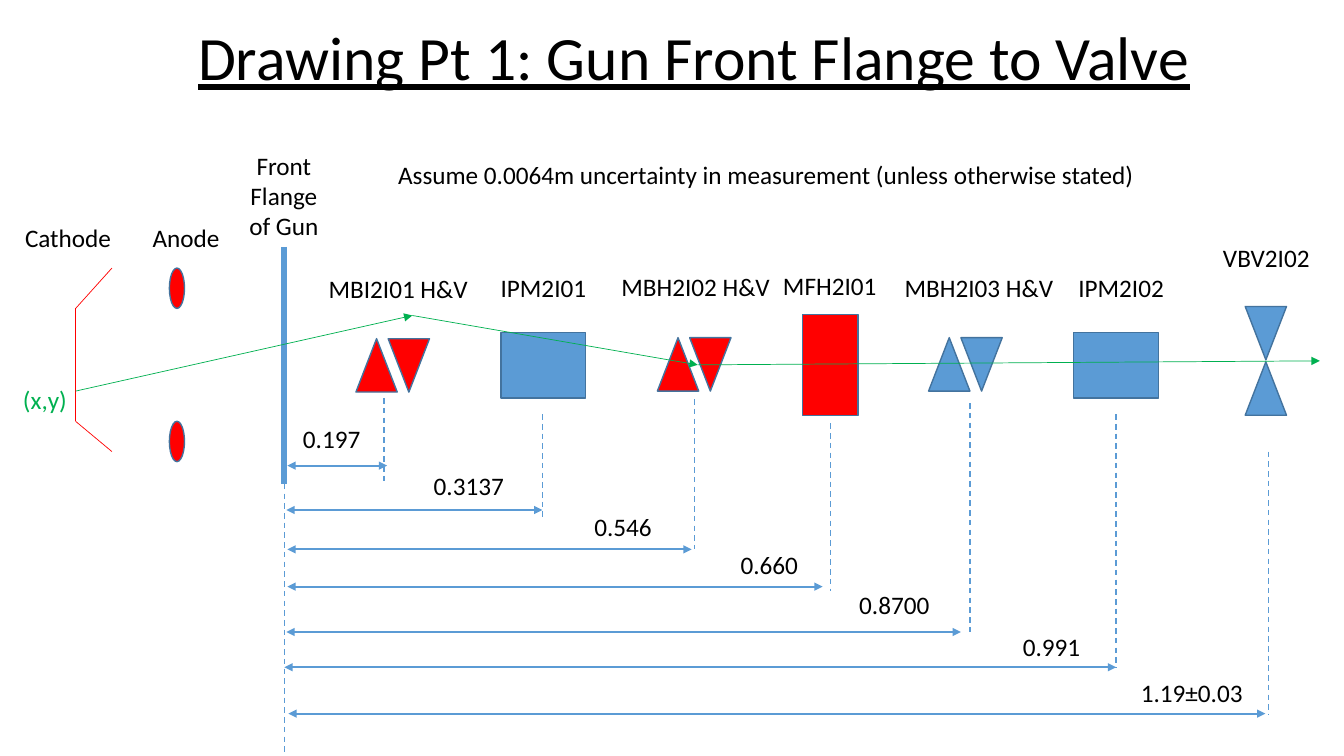
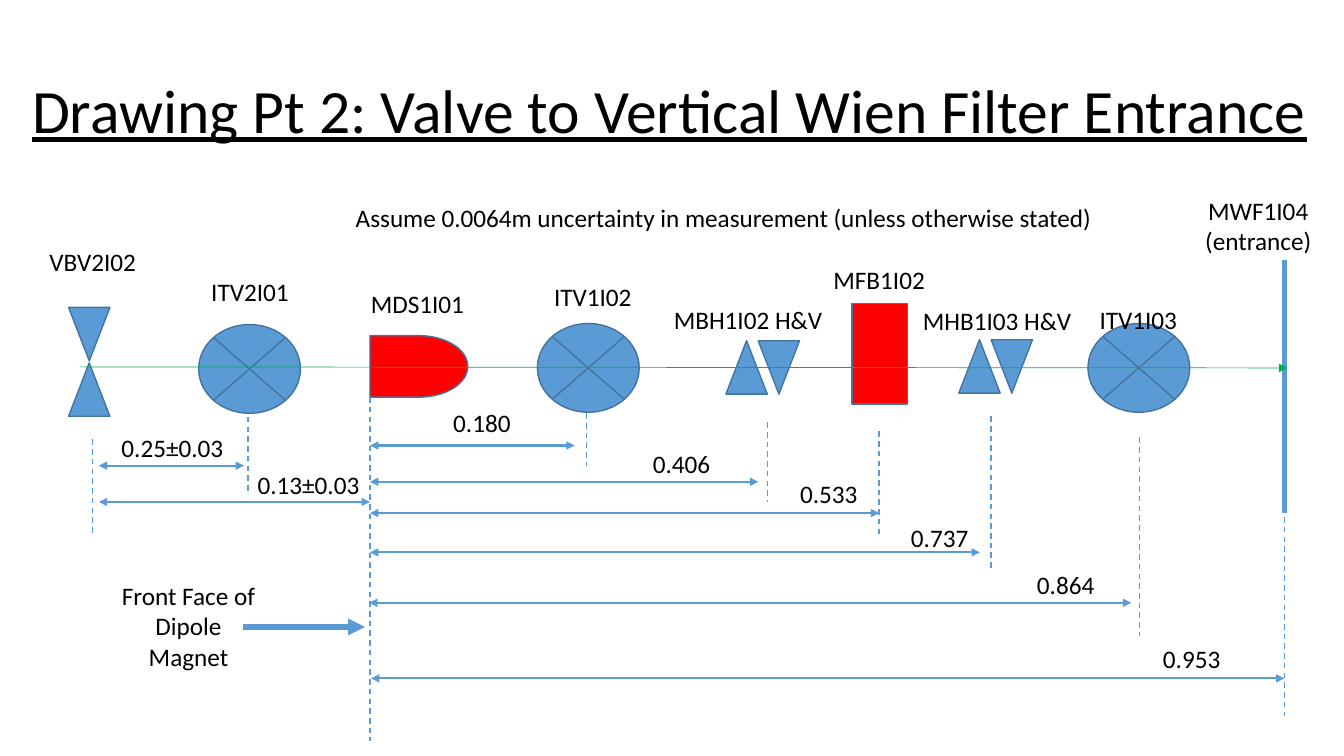
from dataclasses import dataclass, field
from itertools import pairwise

from pptx import Presentation
from pptx import util as u
from pptx.dml import color
from pptx.enum import dml, shapes, text
from pptx.oxml import xmlchemy

PX = 9144  # EMU in one px, 100 px to the inch
SHAPE = shapes.MSO_SHAPE
ALIGN = text.PP_ALIGN


def rgb(code):
    return color.RGBColor.from_string(code)


@dataclass(frozen=True)
class Theme:
    ink: str = "000000"
    cool: str = "5B9BD5"
    hot: str = "FF0000"
    outline: str = "43739E"
    beam: str = "00B050"
    title: dict = field(default_factory=lambda: dict(
        name="Calibri", size=u.Pt(44), underline=True))
    body: dict = field(default_factory=lambda: dict(
        name="Calibri", size=u.Pt(18), underline=False))
    hairline: float = 0.5
    thin: float = 1
    measure: float = 1.5
    thick: float = 4


THEME = Theme()


@dataclass(frozen=True)
class Box:
    left: int
    top: int
    width: int = 0
    height: int = 0

    def inner(self, left, top, width=0, height=0):
        return Box(self.left + left, self.top + top, width, height)

    def emu(self):
        return [side * PX for side in (self.left, self.top, self.width, self.height)]


# Each beamline element is made of (preset, left, top, width, height, rotation)
ELEMENTS = {
    "steerer": [(SHAPE.ISOSCELES_TRIANGLE, 0, 0, 41, 53, 0),
                (SHAPE.ISOSCELES_TRIANGLE, 32, 0, 41, 53, 180)],
    "valve": [(SHAPE.ISOSCELES_TRIANGLE, 0, 0, 41, 53, 180),
              (SHAPE.ISOSCELES_TRIANGLE, 0, 55, 41, 53, 0)],
    "monitor": [(SHAPE.RECTANGLE, 0, 0, 84, 65, 0)],
    "lens": [(SHAPE.RECTANGLE, 0, 0, 55, 100, 0)],
    "viewer": [(SHAPE.FLOWCHART_SUMMING_JUNCTION, 0, 0, 101, 88, 0)],
    "dipole": [(SHAPE.FLOWCHART_DELAY, 0, 0, 97, 61, 0)],
    "anode": [(SHAPE.OVAL, 0, 0, 15, 40, 0)],
}


# Basic parts

def apply(target, values):
    for name, value in values.items():
        setattr(target, name, value)


def add_text(page, box, words, style=THEME.body, align=ALIGN.CENTER,
             ink=THEME.ink, wrap=True, spacing=1.0, anchor=text.MSO_ANCHOR.TOP):
    frame = page.shapes.add_textbox(*box.emu()).text_frame
    apply(frame, dict(word_wrap=wrap, vertical_anchor=anchor))
    para = frame.paragraphs[0]
    apply(para, dict(alignment=align, line_spacing=spacing))
    span = para.add_run()
    span.text = words
    apply(span.font, style)
    span.font.color.rgb = rgb(ink)


def add_line(page, box, start, end, ink=THEME.cool, weight=THEME.thin,
             dashed=False, heads=()):
    ends = [box.inner(*point).emu()[:2] for point in (start, end)]
    line = page.shapes.add_connector(shapes.MSO_CONNECTOR.STRAIGHT, *ends[0], *ends[1])
    line.line.color.rgb = rgb(ink)
    line.line.width = u.Pt(weight)
    if dashed:
        line.line.dash_style = dml.MSO_LINE.DASH
    stroke = line.line._get_or_add_ln()
    for head in heads:
        stroke.append(xmlchemy.OxmlElement(f"a:{head}", ) )
        stroke[-1].set("type", "triangle")
    line._element.spPr.append(xmlchemy.OxmlElement("a:effectLst"))


def add_element(page, box, kind, fill):
    for preset, left, top, width, height, turn in ELEMENTS[kind]:
        part = page.shapes.add_shape(preset, *box.inner(left, top, width, height).emu())
        part.rotation = turn
        part.shadow.inherit = False
        part.fill.solid()
        part.fill.fore_color.rgb = rgb(fill)
        part.line.color.rgb = rgb(THEME.outline)
        part.line.width = u.Pt(THEME.thin)


# Regions

def add_title(page, box, words, align):
    add_text(page, box, words, THEME.title, align, spacing=0.9,
             anchor=text.MSO_ANCHOR.MIDDLE)


def add_note(page, box):
    add_text(page, box, "Assume 0.0064m uncertainty in measurement (unless otherwise stated)",
             align=ALIGN.LEFT)


def add_gun(page, box):
    for top in (122, 274):
        add_element(page, box.inner(155, top), "anode", THEME.hot)
    cathode = [(98, 122), (62, 162), (62, 274), (98, 304)]
    for start, end in pairwise(cathode):
        add_line(page, box, start, end, THEME.hot, THEME.hairline)
    add_line(page, box, (269, 101), (269, 336), weight=THEME.thick)
    add_text(page, box.inner(2, 72, 127, 40), "Cathode", align=ALIGN.LEFT)
    add_text(page, box.inner(124, 72, 95, 40), "Anode")
    add_text(page, box.inner(221, 0, 95, 101), "Front Flange of Gun")
    add_text(page, box.inner(0, 232, 64, 40), "(x,y)", align=ALIGN.LEFT,
             ink=THEME.beam, wrap=False)


def add_beamline(page, box, rows):
    """Rows: kind, left, top, fill, label, label centre, label top."""
    for kind, left, top, fill, *_ in rows:
        add_element(page, box.inner(left, top), kind, fill)
    for *_, label, centre, top in rows:
        add_text(page, box.inner(centre - 95, top, 190, 40), label)


def add_dimensions(page, box, datum, rows):
    """Rows: value, its centre and top; arrow start, end and y; guide x, top and bottom."""
    guides = [(0, *datum)] + [row[6:] for row in rows]
    for x, top, bottom in guides:
        add_line(page, box, (x, top), (x, bottom), dashed=True)
    for value, centre, top, start, end, y, *_ in rows:
        add_line(page, box, (start, y), (end, y), weight=THEME.measure,
                 heads=("headEnd", "tailEnd"))
        add_text(page, box.inner(centre - 90, top, 180, 40), value)


def add_beam(page, box, points):
    for start, end in pairwise(points):
        add_line(page, box, start, end, THEME.beam, THEME.hairline, heads=("tailEnd",))


def add_filter_entrance(page, box):
    add_line(page, box, (111, 69), (111, 320), weight=THEME.thick)
    add_text(page, box, "MWF1I04 (entrance)")


def add_dipole_callout(page, box):
    add_text(page, box, "Front Face of Dipole Magnet")
    add_line(page, box, (133, 51), (254, 51), weight=THEME.thick, heads=("tailEnd",))


# Slides

GUN_ELEMENTS = [
    ("steerer", 71, 100, THEME.hot, "MBI2I01 H&V", 113, 30),
    ("monitor", 215, 94, THEME.cool, "IPM2I01", 257, 29),
    ("steerer", 370, 99, THEME.hot, "MBH2I02 H&V", 408, 28),
    ("lens", 514, 76, THEME.hot, "MFH2I01", 541, 27),
    ("steerer", 639, 99, THEME.cool, "MBH2I03 H&V", 689, 29),
    ("monitor", 783, 94, THEME.cool, "IPM2I02", 830, 29),
    ("valve", 953, 68, THEME.cool, "VBV2I02", 974, 0),
]
GUN_DIMENSIONS = [
    ("0.197", 47, 20, 3, 102, 67, 99, 0, 85),
    ("0.3137", 183, 67, 2, 256, 111, 256, 16, 120),
    ("0.546", 336, 107, 3, 404, 150, 407, 1, 150),
    ("0.660", 481, 145, 3, 534, 187, 542, 25, 191),
    ("0.8700", 605, 185, 2, 671, 232, 680, 5, 232),
    ("0.991", 761, 226, 0, 825, 267, 825, 16, 267),
    ("1.19±0.03", 900, 272, 4, 973, 313, 976, 53, 314),
]
FILTER_ELEMENTS = [
    ("valve", 0, 116, THEME.cool, "VBV2I02", 24, 50),
    ("viewer", 129, 133, THEME.cool, "ITV2I01", 180, 80),
    ("dipole", 299, 144, THEME.hot, "MDS1I01", 346, 92),
    ("viewer", 465, 132, THEME.cool, "ITV1I02", 520, 85),
    ("steerer", 652, 149, THEME.cool, "MBH1I02 H&V", 674, 108),
    ("lens", 777, 112, THEME.hot, "MFB1I02", 804, 68),
    ("steerer", 883, 148, THEME.cool, "MHB1I03 H&V", 921, 109),
    ("viewer", 1011, 132, THEME.cool, "ITV1I03", 1061, 108),
]
FILTER_DIMENSIONS = [
    ("0.25±0.03", -196, 30, -269, -125, 68, -121, 10, 95),
    ("0.13±0.03", -61, 67, -269, 0, 104, -275, 42, 137),
    ("0.180", 111, 5, 0, 203, 48, 215, 16, 68),
    ("0.406", 309, 46, 0, 385, 84, 394, 25, 104),
    ("0.533", 455, 76, 0, 505, 115, 505, 34, 137),
    ("0.737", 565, 119, 0, 605, 154, 616, 19, 171),
    ("0.864", 690, 166, -1, 755, 204, 763, 40, 237),
    ("0.953", 815, 239, 1, 907, 279, 907, 119, 316),
]


def build_gun_slide(page):
    add_title(page, Box(135, 5, 1107, 111), "Drawing Pt 1: Gun Front Flange to Valve",
              ALIGN.CENTER)
    add_gun(page, Box(13, 144))
    add_beamline(page, Box(282, 236), GUN_ELEMENTS)
    add_dimensions(page, Box(282, 395), (85, 355), GUN_DIMENSIONS)
    add_note(page, Box(385, 153, 782, 40))
    add_beam(page, Box(75, 312), [(0, 76), (334, 1), (617, 50), (1234, 46)])


def build_filter_slide(page):
    add_title(page, Box(22, 40, 1294, 145),
              "Drawing Pt 2: Valve to Vertical Wien Filter Entrance", ALIGN.LEFT)
    add_beamline(page, Box(68, 189), FILTER_ELEMENTS)
    add_filter_entrance(page, Box(1163, 189, 170, 71))
    add_dimensions(page, Box(367, 394), (0, 341), FILTER_DIMENSIONS)
    add_note(page, Box(343, 196, 778, 40))
    add_dipole_callout(page, Box(108, 571, 158, 101))
    add_beam(page, Box(79, 364), [(0, 0), (1198, 1)])


def main():
    deck = Presentation()
    apply(deck, dict(slide_width=1333 * PX, slide_height=750 * PX))
    for build in (build_gun_slide, build_filter_slide):
        build(deck.slides.add_slide(deck.slide_layouts[6]))
    deck.save("out.pptx")


if __name__ == "__main__":
    main()
